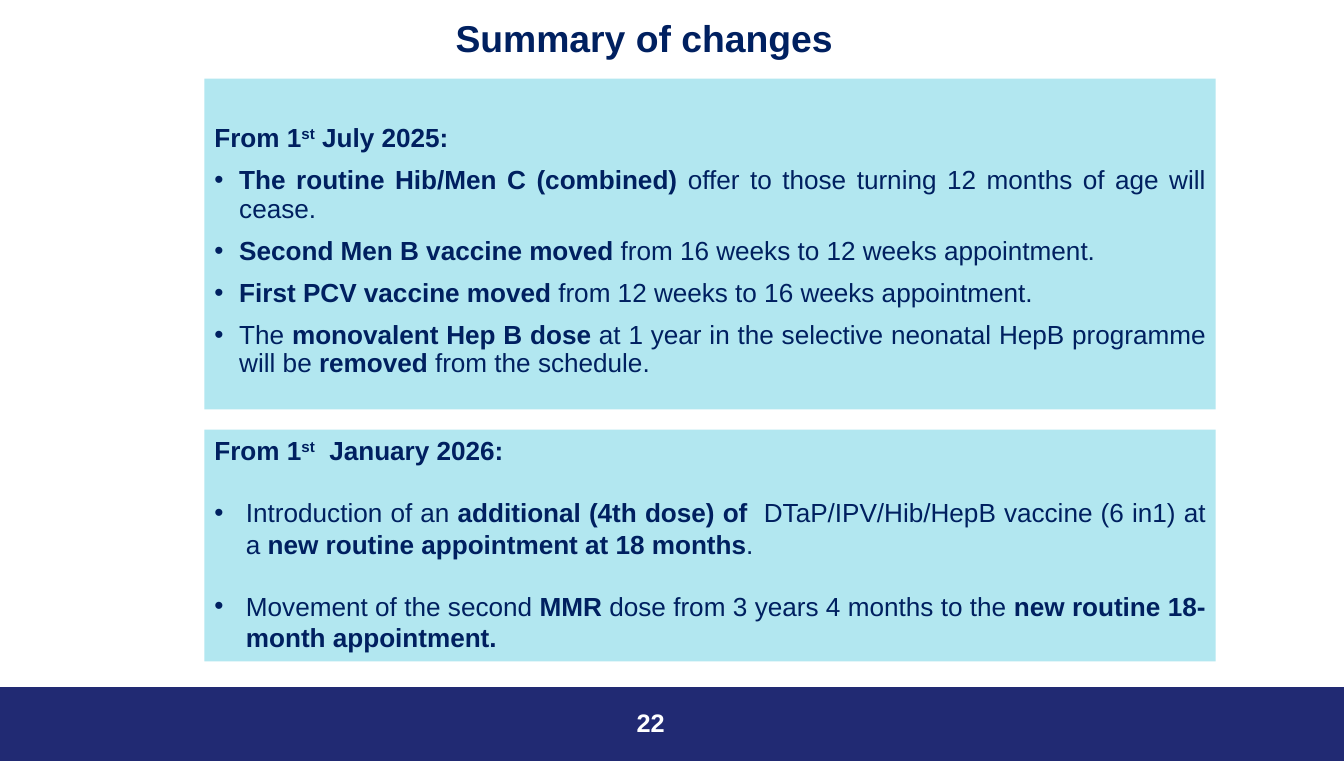
from dataclasses import dataclass

from lxml import etree
from pptx import Presentation
from pptx.dml.color import RGBColor
from pptx.enum.shapes import MSO_SHAPE
from pptx.enum.text import MSO_ANCHOR, PP_ALIGN
from pptx.oxml.ns import qn
from pptx.util import Inches, Pt

RECTANGLE = MSO_SHAPE.RECTANGLE
TOP = MSO_ANCHOR.TOP
CENTER, JUSTIFY, RIGHT = PP_ALIGN.CENTER, PP_ALIGN.JUSTIFY, PP_ALIGN.RIGHT
WIDTH, HEIGHT = 20, 11.32
PANEL_LEFT, PANEL_WIDTH = 0.152 * WIDTH, 0.7525 * WIDTH


@dataclass(frozen=True)
class Theme:
    """Colours, font and type sizes of the slide."""

    font: str = "Arial"
    ink: str = "002060"
    panel: str = "B2E7F0"
    footer: str = "212A73"
    light: str = "FFFFFF"
    title_size: float = 40
    body_size: float = 28
    number_size: float = 27.1


THEME = Theme()

JULY_CHANGES = [
    "*The routine Hib/Men C (combined)* offer to those turning 12 months of age will cease.",
    "*Second Men B vaccine moved* from 16 weeks to 12 weeks appointment.",
    "*First PCV vaccine moved* from 12 weeks to 16 weeks appointment.",
    "The *monovalent Hep B dose* at 1 year in the selective neonatal HepB programme "
    "will be *removed* from the schedule.",
]
JANUARY_CHANGES = [
    "Introduction of an *additional (4th dose) of * DTaP/IPV/Hib/HepB vaccine (6 in1) "
    "at a *new routine appointment at 18 months*.",
    "Movement of the second *MMR* dose from 3 years 4 months to the "
    "*new routine 18-month appointment.*",
]


def apply_format(target, values):
    """Set each attribute in values on the target."""
    for name, value in values.items():
        setattr(target, name, value)


def add_run(paragraph, text, size, color=THEME.ink, bold=True, raised=False):
    """Append a formatted run, raised as a superscript on request."""
    run = paragraph.add_run()
    run.text = text
    apply_format(run.font, {"name": THEME.font, "size": Pt(size), "bold": bold})
    run.font.color.rgb = RGBColor.from_string(color)
    if raised:
        run.font._element.set("baseline", "30000")


def add_rectangle(slide, left, top, width, height, color):
    """Add a flat filled rectangle."""
    shape = slide.shapes.add_shape(
        RECTANGLE, Inches(left), Inches(top), Inches(width), Inches(height))
    shape.shadow.inherit = False
    shape.fill.solid()
    shape.fill.fore_color.rgb = RGBColor.from_string(color)
    shape.line.fill.background()
    return shape


def add_label(slide, box, text, size, color, alignment, line_spacing=1.0):
    """Add a single line of bold text in a text box."""
    frame = slide.shapes.add_textbox(*map(Inches, box)).text_frame
    frame.word_wrap = True
    paragraph = frame.paragraphs[0]
    apply_format(paragraph, {"alignment": alignment, "line_spacing": line_spacing})
    add_run(paragraph, text, size, color)


def add_bullet(paragraph, indent):
    """Give the paragraph a round bullet with a hanging indent."""
    properties = paragraph._p.get_or_add_pPr()
    properties.set("marL", str(Inches(indent)))
    properties.set("indent", str(-Inches(indent)))
    font = etree.SubElement(properties, qn("a:buFont"))
    font.set("typeface", THEME.font)
    etree.SubElement(properties, qn("a:buChar")).set("char", "•")


def add_panel(slide, top, height, date, changes, top_inset, indent, line_spacing, gap):
    """Add a coloured panel with a dated heading and its bulleted changes."""
    shape = add_rectangle(slide, PANEL_LEFT, top, PANEL_WIDTH, height, THEME.panel)
    frame = shape.text_frame
    apply_format(frame, {
        "word_wrap": True, "vertical_anchor": TOP,
        "margin_left": Inches(0.15), "margin_right": Inches(0.15),
        "margin_top": Inches(top_inset), "margin_bottom": Inches(0.07)})
    heading = frame.paragraphs[0]
    apply_format(heading, {"alignment": JUSTIFY, "line_spacing": line_spacing})
    for text, raised in (("From 1", False), ("st", True), (date, False)):
        add_run(heading, text, THEME.body_size, raised=raised)
    for change in changes:
        paragraph = frame.add_paragraph()
        apply_format(paragraph, {
            "alignment": JUSTIFY, "line_spacing": line_spacing, "space_before": Pt(gap)})
        add_bullet(paragraph, indent)
        for index, text in enumerate(change.split("*")):
            if text:
                add_run(paragraph, text, THEME.body_size, bold=index % 2 == 1)


def main():
    """Build the summary slide and save it."""
    presentation = Presentation()
    presentation.slide_width, presentation.slide_height = Inches(WIDTH), Inches(HEIGHT)
    slide = presentation.slides.add_slide(presentation.slide_layouts[6])
    footer_top = 0.903 * HEIGHT
    add_rectangle(slide, 0, footer_top, WIDTH, HEIGHT - footer_top, THEME.footer)
    add_label(slide, (3.43, 0.25, 12.31, 0.8), "Summary of changes",
              THEME.title_size, THEME.ink, CENTER, 0.9)
    add_panel(slide, 1.17, 4.92, " July 2025:", JULY_CHANGES,
              top_inset=0.69, indent=0.37, line_spacing=0.9, gap=14.9)
    add_panel(slide, 6.39, 3.45, "  January 2026:", JANUARY_CHANGES,
              top_inset=0.07, indent=0.47, line_spacing=1.0, gap=33)
    add_label(slide, (9.14, footer_top + 0.25, 0.85, 0.6), "22",
              THEME.number_size, THEME.light, RIGHT)
    presentation.save("out.pptx")


if __name__ == "__main__":
    main()
